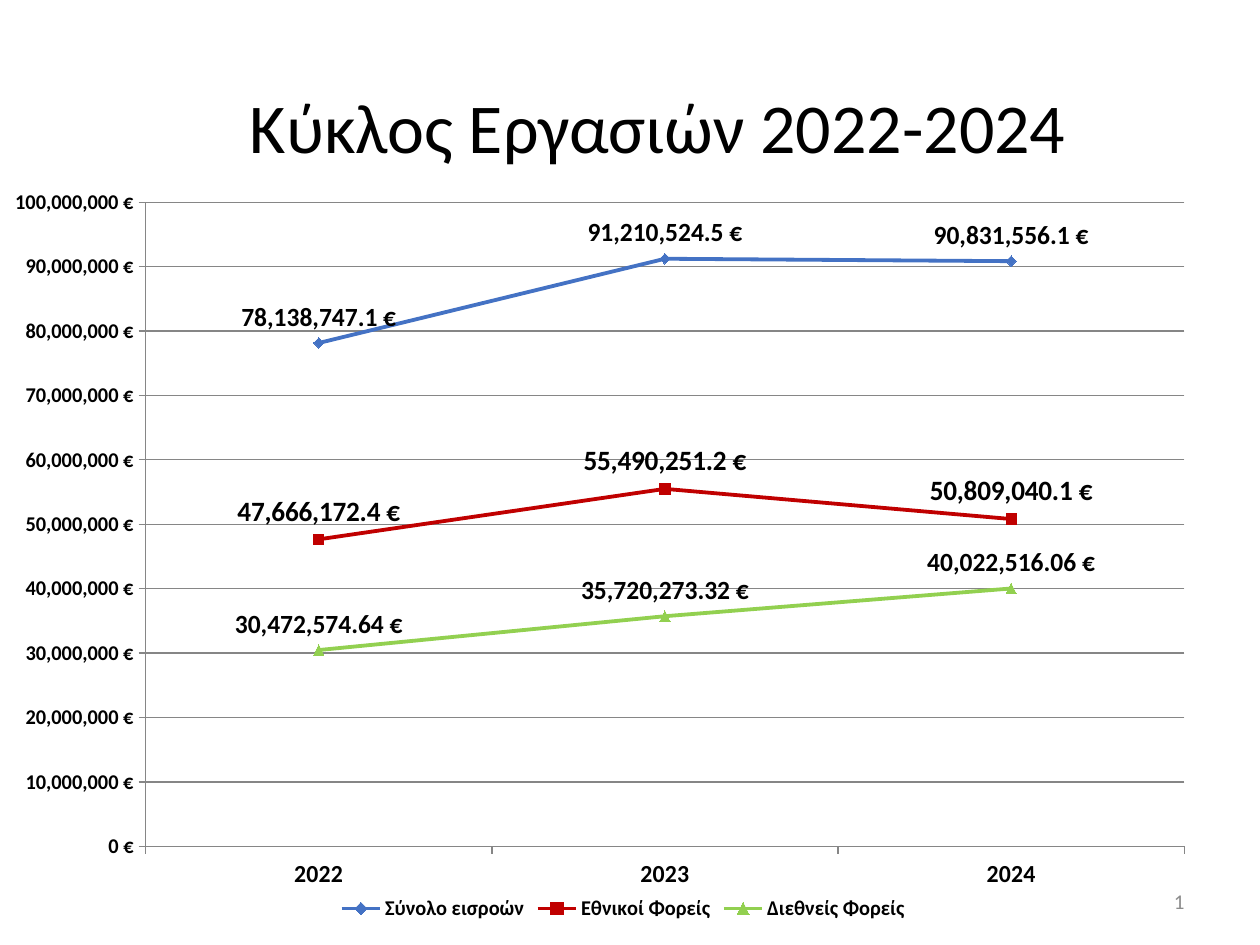
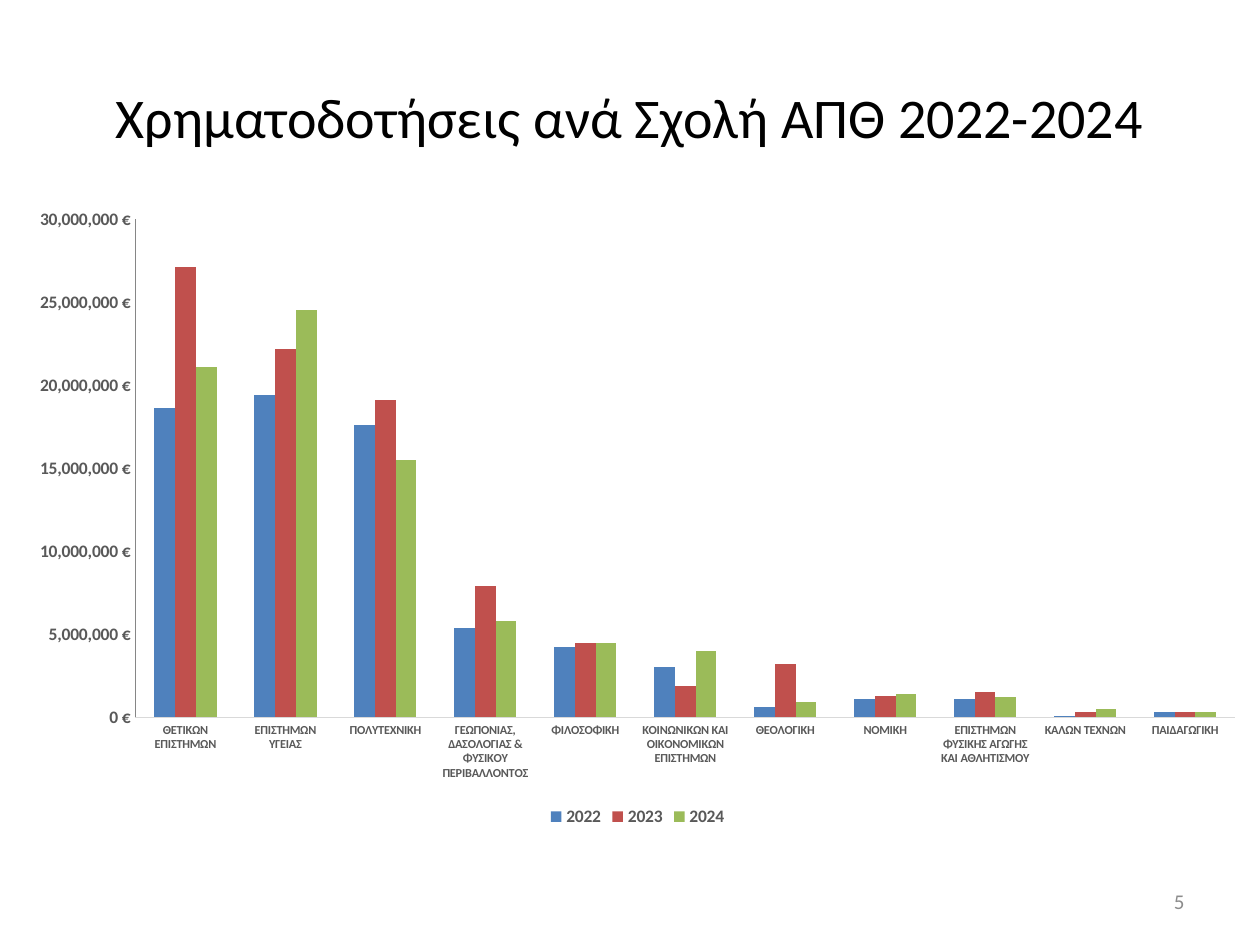
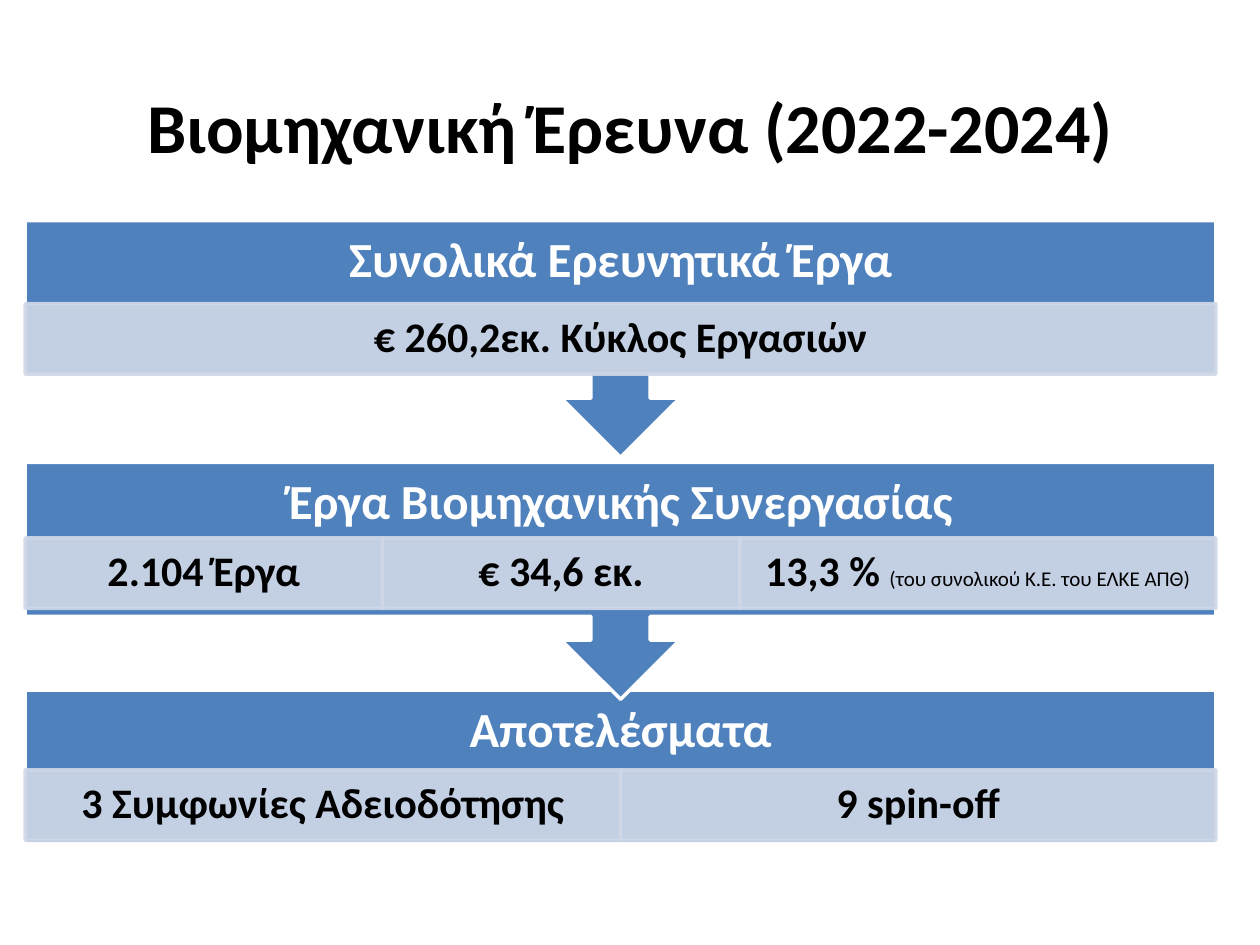
"""Build three slides on research turnover, funding by school and industrial research."""
from dataclasses import dataclass

from lxml.etree import SubElement
from pptx import Presentation
from pptx.chart.data import CategoryChartData
from pptx.dml.color import RGBColor
from pptx.enum.chart import XL_CHART_TYPE as ChartType
from pptx.enum.chart import XL_LABEL_POSITION as LabelPosition
from pptx.enum.chart import XL_LEGEND_POSITION as LegendPosition
from pptx.enum.chart import XL_MARKER_STYLE as Marker
from pptx.enum.chart import XL_TICK_MARK as Tick
from pptx.enum.shapes import MSO_SHAPE as Shape
from pptx.enum.text import MSO_ANCHOR as Anchor
from pptx.enum.text import PP_ALIGN as Align
from pptx.oxml.ns import qn
from pptx.util import Inches, Pt

FONT = "Calibri"
BLACK = RGBColor(0x00, 0x00, 0x00)
WHITE = RGBColor(0xFF, 0xFF, 0xFF)
PAGE_GREY = RGBColor(0x8C, 0x8C, 0x8C)
AXIS_GREY = RGBColor(0x86, 0x86, 0x86)
LABEL_GREY = RGBColor(0x59, 0x59, 0x59)
PALE_GREY = RGBColor(0xD9, 0xD9, 0xD9)
BLUE = RGBColor(0x4F, 0x81, 0xBD)
RED = RGBColor(0xC0, 0x50, 0x4D)
GREEN = RGBColor(0x9B, 0xBB, 0x59)
LINE_BLUE = RGBColor(0x44, 0x72, 0xC4)
LINE_RED = RGBColor(0xC0, 0x00, 0x00)
LINE_GREEN = RGBColor(0x92, 0xD0, 0x50)
CELL_BLUE = RGBColor(0xD0, 0xD8, 0xE8)

COLUMNS, ROWS = 100, 75
UNIT = Inches(0.1)
EURO = '#,##0\\ "€"'
EURO_1 = '#,##0.0\\ "€"'
EURO_2 = '#,##0.00\\ "€"'


@dataclass(frozen=True)
class Area:
    """A rectangle in grid columns and rows."""
    left: float
    top: float
    width: float
    height: float

    def box(self) -> tuple[int, int, int, int]:
        """Return the rectangle in slide units."""
        return tuple(round(n * UNIT) for n in (self.left, self.top, self.width, self.height))


@dataclass(frozen=True)
class Flow:
    """One line of the turnover chart."""
    name: str
    values: tuple[float, ...]
    color: RGBColor
    marker: Marker
    label_format: str
    label_size: int


@dataclass(frozen=True)
class Cell:
    """A result within a stage, with its share of the width."""
    text: str
    share: float
    note: str = ""


@dataclass(frozen=True)
class Stage:
    """A headed band of results."""
    heading: str
    top: float
    cell_offset: float
    cells: tuple[Cell, ...]
    leads_on: bool = True


FLOWS = (
    Flow("Σύνολο εισροών", (78138747.1, 91210524.5, 90831556.1),
         LINE_BLUE, Marker.DIAMOND, EURO_1, 15),
    Flow("Εθνικοί Φορείς", (47666172.4, 55490251.2, 50809040.1),
         LINE_RED, Marker.SQUARE, EURO_1, 16),
    Flow("Διεθνείς Φορείς", (30472574.64, 35720273.32, 40022516.06),
         LINE_GREEN, Marker.TRIANGLE, EURO_2, 15),
)

YEARS = ("2022", "2023", "2024")
YEAR_COLORS = (BLUE, RED, GREEN)
MILLION = 1_000_000
SCHOOL_MILLIONS = {
    "ΘΕΤΙΚΩΝ ΕΠΙΣΤΗΜΩΝ": (18.6, 27.1, 21.1),
    "ΕΠΙΣΤΗΜΩΝ ΥΓΕΙΑΣ": (19.4, 22.2, 24.5),
    "ΠΟΛΥΤΕΧΝΙΚΗ": (17.6, 19.1, 15.5),
    "ΓΕΩΠΟΝΙΑΣ, ΔΑΣΟΛΟΓΙΑΣ & ΦΥΣΙΚΟΥ ΠΕΡΙΒΑΛΛΟΝΤΟΣ": (5.4, 7.9, 5.8),
    "ΦΙΛΟΣΟΦΙΚΗ": (4.2, 4.5, 4.5),
    "ΚΟΙΝΩΝΙΚΩΝ ΚΑΙ ΟΙΚΟΝΟΜΙΚΩΝ ΕΠΙΣΤΗΜΩΝ": (3.0, 1.9, 4.0),
    "ΘΕΟΛΟΓΙΚΗ": (0.6, 3.2, 0.9),
    "ΝΟΜΙΚΗ": (1.1, 1.3, 1.4),
    "ΕΠΙΣΤΗΜΩΝ ΦΥΣΙΚΗΣ ΑΓΩΓΗΣ ΚΑΙ ΑΘΛΗΤΙΣΜΟΥ": (1.1, 1.5, 1.2),
    "ΚΑΛΩΝ ΤΕΧΝΩΝ": (0.1, 0.3, 0.5),
    "ΠΑΙΔΑΓΩΓΙΚΗ": (0.3, 0.3, 0.3),
}

STAGE_LEFT, STAGE_WIDTH = 2, 94.5
HEADING_HEIGHT, CELL_HEIGHT = 6.6, 5.6
CALLOUT_HEIGHT, LAST_HEIGHT = 18.8, 12.2
STAGES = (
    Stage("Συνολικά Ερευνητικά Έργα", 17.5, 6.6,
          (Cell("€ 260,2εκ. Κύκλος Εργασιών", 1),)),
    Stage("Έργα Βιομηχανικής Συνεργασίας", 36.7, 6,
          (Cell("2.104 Έργα", 0.3), Cell("€ 34,6 εκ.", 0.3),
           Cell("13,3 % ", 0.4, "(του συνολικού Κ.Ε. του ΕΛΚΕ ΑΠΘ)"))),
    Stage("Αποτελέσματα", 54.8, 6.3,
          (Cell("3 Συμφωνίες Αδειοδότησης", 0.5), Cell("9 spin-off", 0.5)), False),
)


def style_font(font, *, size: float, color: RGBColor = BLACK, bold: bool = False) -> None:
    """Apply the deck's typeface with a size, colour and weight."""
    font.name, font.size, font.bold = FONT, Pt(size), bold
    font.color.rgb = color


def write(box, text: str, *, size: float, color: RGBColor = BLACK, bold: bool = False,
          align: Align = Align.CENTER, spacing: float | None = None,
          insets: tuple[float, float] = (0.1, 0.05)) -> None:
    """Append formatted text to the first paragraph of a box."""
    frame = box.text_frame
    frame.word_wrap, frame.vertical_anchor = True, Anchor.MIDDLE
    frame.margin_left = frame.margin_right = Inches(insets[0])
    frame.margin_top = frame.margin_bottom = Inches(insets[1])
    para = frame.paragraphs[0]
    para.alignment = align
    if spacing:
        para.line_spacing = spacing
    span = para.add_run()
    span.text = text
    style_font(span.font, size=size, color=color, bold=bold)


def add_page(deck, title: str, area: Area, *, size: float = 40, bold: bool = False,
             number: str = ""):
    """Add a page with its title and, if given, its number."""
    page = deck.slides.add_slide(deck.slide_layouts[5])
    heading = page.shapes.title
    heading.left, heading.top, heading.width, heading.height = area.box()
    write(heading, title, size=size, bold=bold)
    if number:
        box = page.shapes.add_textbox(*Area(71.7, 69.5, 23.3, 4).box())
        write(box, number, size=12, color=PAGE_GREY, align=Align.RIGHT)
    return page


def add_chart(page, kind: ChartType, area: Area, categories, series: dict, *,
              legend_size: float, color: RGBColor = BLACK):
    """Add a chart with a bottom legend."""
    data = CategoryChartData(number_format=EURO)
    data.categories = categories
    for name, values in series.items():
        data.add_series(name, values)
    chart = page.shapes.add_chart(kind, *area.box(), data).chart
    style_font(chart.font, size=10)
    chart.has_title = False
    chart.has_legend = True
    chart.legend.position = LegendPosition.BOTTOM
    chart.legend.include_in_layout = False
    style_font(chart.legend.font, size=legend_size, color=color, bold=True)
    chart.plots[0].vary_by_categories = False
    return chart


def style_axis(axis, *, size: float, tick: Tick, line: RGBColor = AXIS_GREY,
               color: RGBColor = BLACK) -> None:
    """Format an axis and its labels."""
    axis.has_major_gridlines = False
    axis.major_tick_mark, axis.minor_tick_mark = tick, Tick.NONE
    axis.format.line.color.rgb, axis.format.line.width = line, Pt(0.75)
    style_font(axis.tick_labels.font, size=size, color=color, bold=True)


def scale_axis(axis, top: int, step: int) -> None:
    """Give a value axis its range and euro labels."""
    axis.minimum_scale, axis.maximum_scale, axis.major_unit = 0, top, step
    axis.tick_labels.number_format = EURO
    axis.tick_labels.number_format_is_linked = False


def place_plot(chart, x: float, y: float, w: float, h: float) -> None:
    """Fix the inner plot area as shares of the chart."""
    plot_area = chart.element.find(f".//{qn('c:plotArea')}")
    layout = plot_area.find(qn("c:layout"))
    if layout is None:
        layout = SubElement(plot_area, qn("c:layout"))
        plot_area.insert(0, layout)
    manual = SubElement(layout, qn("c:manualLayout"))
    settings = dict(layoutTarget="inner", xMode="edge", yMode="edge", x=x, y=y, w=w, h=h)
    for tag, value in settings.items():
        SubElement(manual, qn(f"c:{tag}")).set("val", str(value))


def draw_turnover(deck) -> None:
    """Draw the turnover line chart."""
    page = add_page(deck, "Κύκλος Εργασιών 2022-2024", Area(7.2, 3.7, 90, 12.5), number="1")
    chart = add_chart(page, ChartType.LINE_MARKERS, Area(1.2, 13.9, 93.8, 59.6), YEARS,
                      {flow.name: flow.values for flow in FLOWS}, legend_size=12)
    place_plot(chart, 0.084, 0.036, 0.905, 0.858)
    style_axis(chart.category_axis, size=14, tick=Tick.OUTSIDE)
    style_axis(chart.value_axis, size=12, tick=Tick.OUTSIDE)
    scale_axis(chart.value_axis, 100 * MILLION, 10 * MILLION)
    grid = chart.value_axis.major_gridlines.format.line
    grid.color.rgb, grid.width = AXIS_GREY, Pt(0.75)
    for flow, series in zip(FLOWS, chart.plots[0].series):
        series.smooth = False
        series.format.line.color.rgb, series.format.line.width = flow.color, Pt(2.25)
        marker = series.marker
        marker.style, marker.size = flow.marker, 6
        marker.format.fill.solid()
        marker.format.fill.fore_color.rgb = flow.color
        marker.format.line.color.rgb = flow.color
        labels = series.data_labels
        labels.show_value, labels.position = True, LabelPosition.ABOVE
        labels.number_format, labels.number_format_is_linked = flow.label_format, False
        style_font(labels.font, size=flow.label_size, bold=True)


def draw_schools(deck) -> None:
    """Draw the column chart of funding by school."""
    page = add_page(deck, "Χρηματοδοτήσεις ανά Σχολή ΑΠΘ 2022-2024", Area(5, 3, 90, 12.5),
                    size=32, number="5")
    by_year = zip(*SCHOOL_MILLIONS.values())
    series = {year: [round(n * MILLION) for n in sums] for year, sums in zip(YEARS, by_year)}
    chart = add_chart(page, ChartType.COLUMN_CLUSTERED, Area(1.2, 15.6, 98.8, 50.4),
                      SCHOOL_MILLIONS, series, legend_size=10, color=LABEL_GREY)
    style_axis(chart.category_axis, size=7, tick=Tick.NONE, line=PALE_GREY, color=LABEL_GREY)
    style_axis(chart.value_axis, size=10, tick=Tick.NONE, color=LABEL_GREY)
    scale_axis(chart.value_axis, 30 * MILLION, 5 * MILLION)
    plot = chart.plots[0]
    plot.gap_width, plot.overlap = 182, 0
    for columns, color in zip(plot.series, YEAR_COLORS):
        columns.format.fill.solid()
        columns.format.fill.fore_color.rgb = color


def add_block(page, kind: Shape, area: Area, fill: RGBColor, line: RGBColor,
              opacity: int = 100):
    """Add a flat filled shape with a thin outline."""
    block = page.shapes.add_shape(kind, *area.box())
    block.shadow.inherit = False
    block.fill.solid()
    block.fill.fore_color.rgb = fill
    block.line.color.rgb, block.line.width = line, Pt(2)
    if opacity < 100:
        for color in block.element.spPr.iter(qn("a:srgbClr")):
            SubElement(color, qn("a:alpha")).set("val", str(opacity * 1000))
    return block


def draw_stage(page, stage: Stage) -> None:
    """Draw a stage with its heading and row of cells."""
    kind, height = ((Shape.UP_ARROW_CALLOUT, CALLOUT_HEIGHT) if stage.leads_on
                    else (Shape.RECTANGLE, LAST_HEIGHT))
    band = add_block(page, kind, Area(STAGE_LEFT, stage.top, STAGE_WIDTH, height), BLUE, WHITE)
    band.rotation = 180 if stage.leads_on else 0
    heading = page.shapes.add_textbox(
        *Area(STAGE_LEFT, stage.top, STAGE_WIDTH, HEADING_HEIGHT).box())
    write(heading, stage.heading, size=28, color=WHITE, bold=True, spacing=0.9,
          insets=(0.22, 0.22))
    left = STAGE_LEFT
    for cell in stage.cells:
        width = STAGE_WIDTH * cell.share
        box = add_block(page, Shape.RECTANGLE,
                        Area(left, stage.top + stage.cell_offset, width, CELL_HEIGHT),
                        CELL_BLUE, CELL_BLUE, opacity=90)
        layout = dict(spacing=0.9, insets=(0.19, 0.03))
        write(box, cell.text, size=24, bold=True, **layout)
        if cell.note:
            write(box, cell.note, size=12, **layout)
        left += width


def draw_industry(deck) -> None:
    """Draw the stages of industrial research, the last one at the back."""
    page = add_page(deck, "Βιομηχανική Έρευνα (2022-2024)", Area(5, 4.4, 90, 11.1), bold=True)
    for stage in reversed(STAGES):
        draw_stage(page, stage)


def main() -> None:
    """Build and save the deck."""
    deck = Presentation()
    deck.slide_width, deck.slide_height = COLUMNS * UNIT, ROWS * UNIT
    draw_turnover(deck)
    draw_schools(deck)
    draw_industry(deck)
    deck.save("out.pptx")


if __name__ == "__main__":
    main()
